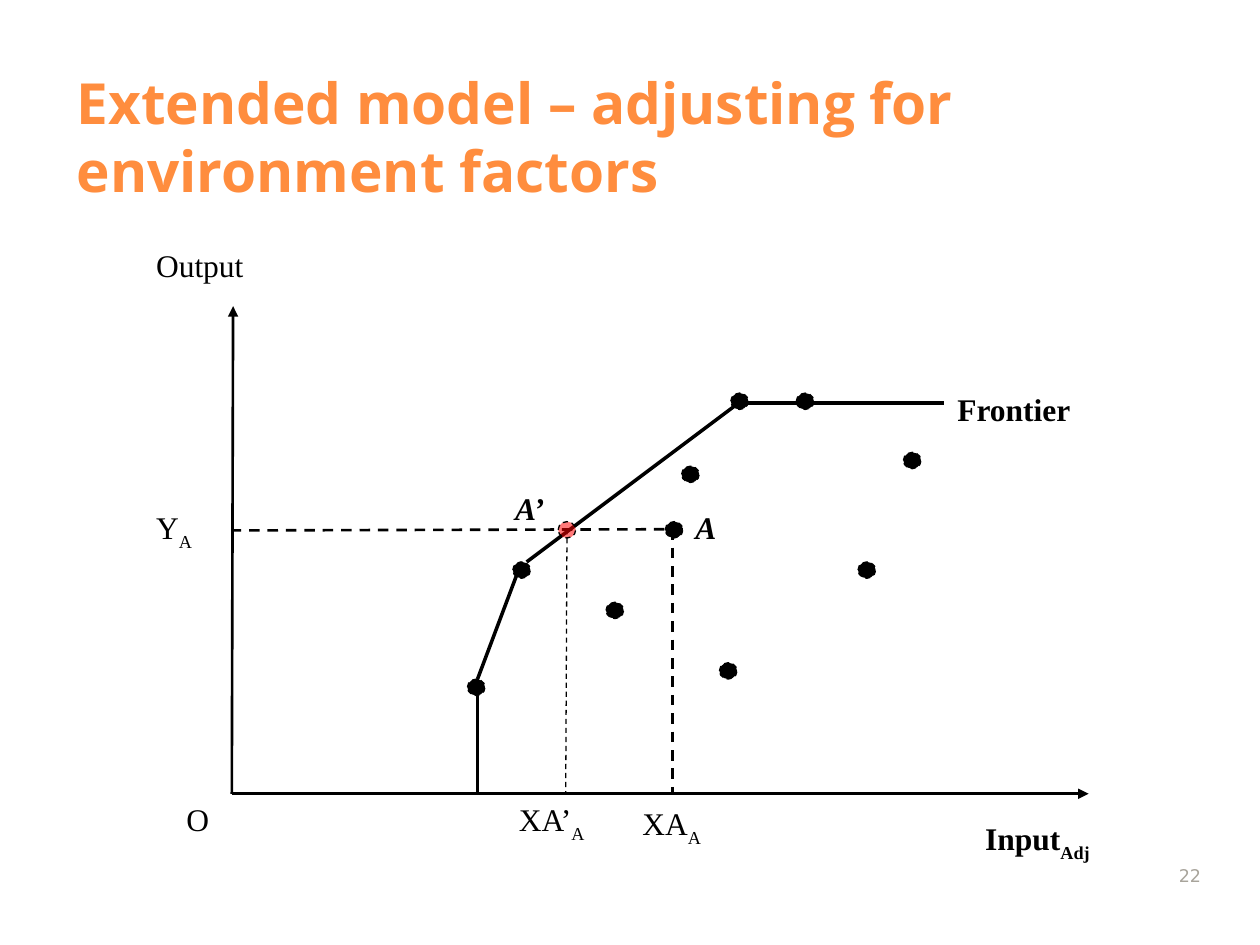
from pptx import Presentation
from pptx.dml.color import RGBColor
from pptx.enum.dml import MSO_LINE
from pptx.enum.shapes import MSO_CONNECTOR, MSO_SHAPE
from pptx.enum.text import MSO_ANCHOR, PP_ALIGN
from pptx.oxml.ns import qn
from pptx.util import Inches, Pt
from lxml.etree import SubElement

BLACK = RGBColor(0x00, 0x00, 0x00)
ORANGE = RGBColor(0xFF, 0x8D, 0x3E)
RED = RGBColor(0xFF, 0x00, 0x00)
GREY = RGBColor(0xA8, 0xA4, 0x9B)

DOT_WIDTH, DOT_HEIGHT = 0.14, 0.13
ORIGIN = (1.84, 6.3)


def add_run(paragraph, text, font="Times New Roman", size=18, color=BLACK,
            bold=False, italic=False, subscript=False):
    run = paragraph.add_run()
    run.text = text
    run.font.name = font
    run.font.size = Pt(size)
    run.font.color.rgb = color
    run.font.bold = bold
    run.font.italic = italic
    if subscript:
        run.font._element.set("baseline", "-30000")


class FrontierSlide:
    def __init__(self, presentation, line_color=BLACK):
        self.line_color = line_color
        self.slide = presentation.slides.add_slide(presentation.slide_layouts[6])

    def label(self, left, top, width, height, text, subscript="",
              anchor=MSO_ANCHOR.TOP, align=PP_ALIGN.LEFT, **style):
        box = self.slide.shapes.add_textbox(
            Inches(left), Inches(top), Inches(width), Inches(height))
        frame = box.text_frame
        frame.word_wrap = True
        frame.vertical_anchor = anchor
        paragraph = frame.paragraphs[0]
        paragraph.alignment = align
        add_run(paragraph, text, **style)
        if subscript:
            add_run(paragraph, subscript, subscript=True, **style)

    def line(self, start, end, width=1.5, dashed=False, arrow=False):
        connector = self.slide.shapes.add_connector(
            MSO_CONNECTOR.STRAIGHT, *map(Inches, start + end))
        connector.line.color.rgb = self.line_color
        connector.line.width = Pt(width)
        if dashed:
            connector.line.dash_style = MSO_LINE.DASH
        if arrow:
            SubElement(connector.line._get_or_add_ln(), qn("a:tailEnd"), type="triangle")
        SubElement(connector._element.spPr, qn("a:effectLst"))

    def dot(self, left, top, color=BLACK, opacity=100):
        dot = self.slide.shapes.add_shape(
            MSO_SHAPE.OVAL, Inches(left), Inches(top),
            Inches(DOT_WIDTH), Inches(DOT_HEIGHT))
        dot.shadow.inherit = False
        dot.fill.solid()
        dot.fill.fore_color.rgb = color
        dot.line.color.rgb = self.line_color
        dot.line.width = Pt(0.75)
        dot.line.dash_style = MSO_LINE.DASH
        if opacity < 100:
            rgb = dot._element.spPr.find(qn("a:solidFill")).find(qn("a:srgbClr"))
            SubElement(rgb, qn("a:alpha"), val=str(opacity * 1000))


def main():
    presentation = Presentation()
    presentation.slide_width = Inches(10)
    presentation.slide_height = Inches(7.5)
    chart = FrontierSlide(presentation)

    # Title
    chart.label(0.51, 0.52, 8.95, 1.15,
                "Extended model – adjusting for environment factors",
                anchor=MSO_ANCHOR.BOTTOM, font="Open Sans", size=32.4,
                color=ORANGE, bold=True)

    # Axes
    chart.line(ORIGIN, (8.64, 6.3), arrow=True)
    chart.line(ORIGIN, (1.85, 2.43), arrow=True)
    chart.label(1.14, 1.9, 1.32, 0.53, "Output")
    chart.label(7.72, 6.45, 1.27, 0.45, "Input", "Adj", bold=True)
    chart.label(1.38, 6.3, 0.59, 0.45, "O")

    # Frontier
    frontier_segments = [
        ((3.79, 6.3), (3.79, 5.39)),
        ((3.79, 5.39), (4.14, 4.46)),
        ((4.18, 4.46), (5.86, 3.2)),
        ((5.86, 3.2), (7.49, 3.2)),
    ]
    for start, end in frontier_segments:
        chart.line(start, end, width=2)
    chart.label(7.5, 3.05, 1.26, 0.46, "Frontier", bold=True)

    # Projections of A and A’ onto the axes
    chart.line((5.34, 4.2), (5.34, 6.3), dashed=True)
    chart.line((5.42, 4.2), (1.84, 4.21), dashed=True)
    chart.line((4.5, 4.2), (4.49, 6.3), width=0.75, dashed=True)

    # Observed units, then the adjusted point A’
    observed_units = [
        (3.71, 5.39), (4.07, 4.46), (5.8, 3.12), (6.32, 3.12), (5.41, 3.7),
        (7.17, 3.59), (5.28, 4.14), (6.81, 4.46), (4.81, 4.78), (5.71, 5.26),
    ]
    for left, top in observed_units:
        chart.dot(left, top)
    chart.dot(4.43, 4.14, color=RED, opacity=52)

    # Point and coordinate labels
    chart.label(5.42, 3.98, 0.47, 0.48, "A", bold=True, italic=True)
    chart.label(3.99, 3.83, 0.65, 0.45, "A’", bold=True, italic=True)
    chart.label(1.14, 3.98, 0.82, 0.61, "Y", "A")
    chart.label(5, 6.33, 0.98, 0.45, "XA", "A")
    chart.label(4.02, 6.3, 0.93, 0.45, "XA’", "A")

    # Slide number
    chart.label(9.13, 6.68, 0.5, 0.4, "22", anchor=MSO_ANCHOR.BOTTOM,
                align=PP_ALIGN.RIGHT, font="DejaVu Sans", size=10, color=GREY)

    presentation.save("out.pptx")


if __name__ == "__main__":
    main()
